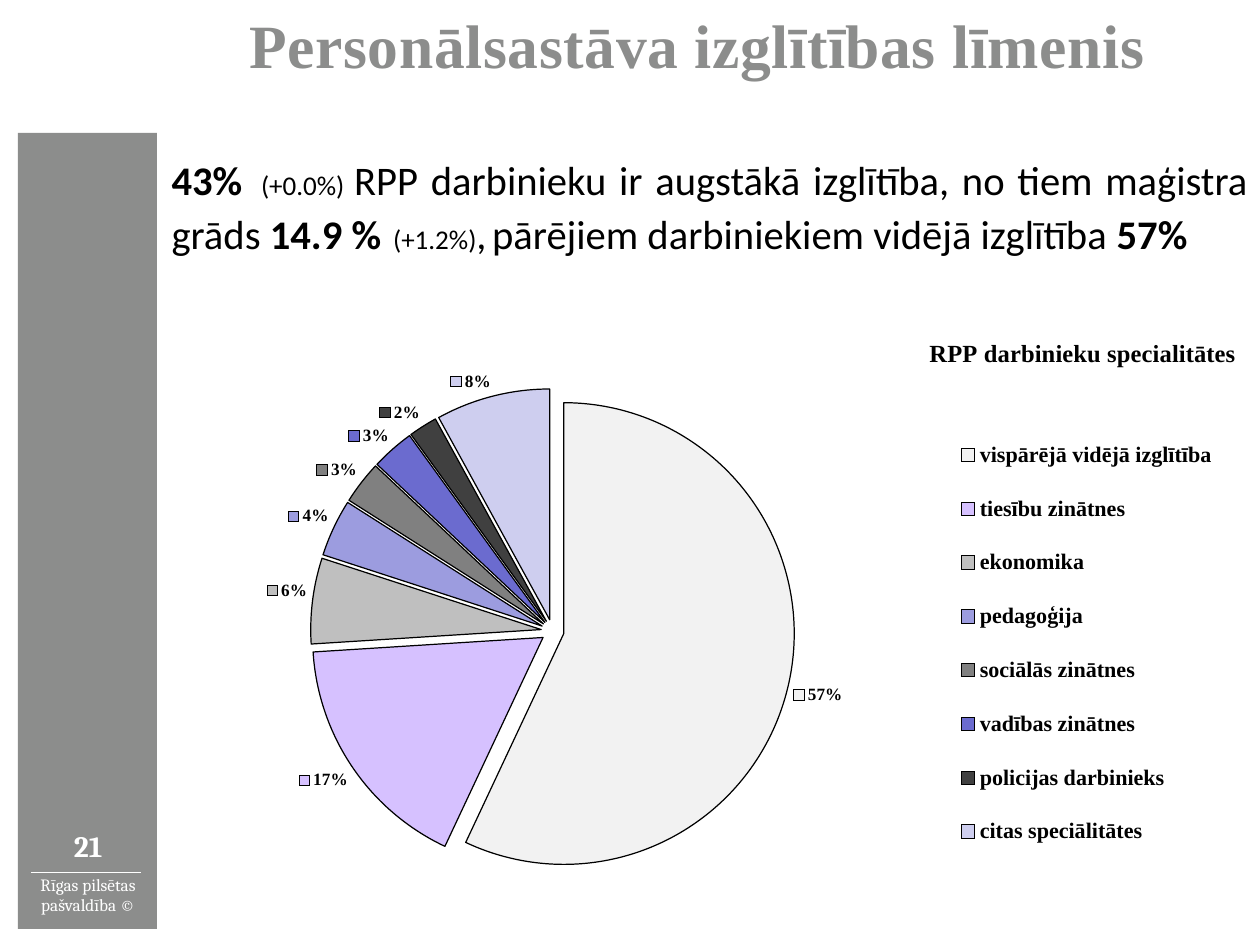
from lxml.etree import SubElement
from pptx import Presentation
from pptx.chart.data import CategoryChartData
from pptx.dml.color import RGBColor
from pptx.enum.chart import XL_CHART_TYPE, XL_LABEL_POSITION, XL_LEGEND_POSITION
from pptx.enum.shapes import MSO_CONNECTOR, MSO_SHAPE
from pptx.enum.text import MSO_ANCHOR, PP_ALIGN
from pptx.oxml import parse_xml
from pptx.oxml.ns import nsdecls, qn
from pptx.util import Cm, Pt

GREY, WHITE, BLACK = "8C8D8C", "FFFFFF", "000000"
SERIF = "Times New Roman"
TITLE = "RPP darbinieku specialitātes"
SHARES = [
    ("vispārējā vidējā izglītība", 0.57, "F2F2F2"),
    ("tiesību zinātnes", 0.17, "D6C1FF"),
    ("ekonomika", 0.06, "BFBFBF"),
    ("pedagoģija", 0.04, "9C9CDF"),
    ("sociālās zinātnes", 0.03, "808080"),
    ("vadības zinātnes", 0.03, "6B6BCF"),
    ("policijas darbinieks", 0.02, "404040"),
    ("citas speciālitātes", 0.08, "CECEEF"),
]
SUMMARY = [
    ("43%", 33, True),
    (" ", 54, False),
    ("(+0.0%) ", 22, False),
    ("RPP darbinieku ir augstākā izglītība, no tiem maģistra grāds ", 33, False),
    ("14.9 % \t", 33, True),
    ("(+1.2%)", 22, False),
    (",", 33, False),
    (" ", 20, False),
    ("pārējiem darbiniekiem vidējā izglītība ", 33, False),
    ("57%", 33, True),
]


def paint(color, value):
    color.rgb = RGBColor.from_string(value)


def style(font, name, size, color=BLACK, bold=False):
    font.name, font.size, font.bold = name, Pt(size), bold
    paint(font.color, color)


def add_bar(slide, *box):
    bar = slide.shapes.add_shape(MSO_SHAPE.RECTANGLE, *map(Cm, box))
    bar.shadow.inherit = False
    bar.fill.solid()
    paint(bar.fill.fore_color, GREY)
    bar.line.fill.background()


def add_rule(slide, left, right, top):
    rule = slide.shapes.add_connector(
        MSO_CONNECTOR.STRAIGHT, Cm(left), Cm(top), Cm(right), Cm(top))
    paint(rule.line.color, WHITE)
    rule.line.width = Pt(1)
    SubElement(rule.element.spPr, qn("a:effectLst"))


def add_text(slide, box, runs, name, color, align=PP_ALIGN.LEFT, inset=0.15):
    """Add one paragraph made of (text, size, bold) runs."""
    frame = slide.shapes.add_textbox(*map(Cm, box)).text_frame
    frame.word_wrap = True
    frame.vertical_anchor = MSO_ANCHOR.MIDDLE
    frame.margin_left = frame.margin_right = Cm(inset)
    frame.margin_top = frame.margin_bottom = Cm(inset)
    line = frame.paragraphs[0]
    line.alignment = align
    for text, size, bold in runs:
        run = line.add_run()
        run.text = text
        style(run.font, name, size, color, bold)
    return line


def place(part, **spots):
    """Give a chart part a manual layout in fractions of the chart."""
    old = part.find(qn("c:layout"))
    if old is not None:
        part.remove(old)
    inner = '<c:layoutTarget val="inner"/>' if part.tag == qn("c:plotArea") else ""
    modes = "".join(f'<c:{k}Mode val="edge"/>' for k in "xy")
    sizes = "".join(f'<c:{k} val="{v}"/>' for k, v in spots.items())
    layout = parse_xml(
        f'<c:layout {nsdecls("c")}><c:manualLayout>{inner}{modes}{sizes}'
        "</c:manualLayout></c:layout>")
    before = [n for n in part if n.tag in (qn("c:tx"), qn("c:legendPos"))]
    part.insert(len(before), layout)


def add_pie(slide, *box):
    data = CategoryChartData(number_format="0%")
    data.categories = [name for name, _, _ in SHARES]
    data.add_series(TITLE, [share for _, share, _ in SHARES])
    chart = slide.shapes.add_chart(
        XL_CHART_TYPE.PIE_EXPLODED, *map(Cm, box), data).chart
    style(chart.font, "Cambria", 18)

    chart.has_title = True
    head = chart.chart_title.text_frame
    head.text = TITLE
    style(head.paragraphs[0].runs[0].font, SERIF, 20, bold=True)

    chart.has_legend = True
    chart.legend.position = XL_LEGEND_POSITION.RIGHT
    chart.legend.include_in_layout = False
    style(chart.legend.font, SERIF, 18, bold=True)

    plot = chart.plots[0]
    plot.vary_by_categories = True
    pie = plot.series[0]
    for spot, (_, _, color) in enumerate(SHARES):
        form = pie.points[spot].format
        form.fill.solid()
        paint(form.fill.fore_color, color)
        paint(form.line.color, BLACK)
        form.line.width = Pt(1)
    for burst in pie._element.findall(qn("c:explosion")):
        burst.set("val", "5")

    labels = pie.data_labels
    labels.show_value = labels.show_legend_key = True
    labels.show_percentage = False
    labels.number_format, labels.number_format_is_linked = "0%", False
    labels.position = XL_LABEL_POSITION.OUTSIDE_END
    style(labels.font, SERIF, 14, bold=True)

    place(chart.chart_title._element, x=0.71, y=0.07)
    place(chart.legend._element, x=0.73, y=0.2, w=0.26, h=0.75)
    place(plot._element.getparent(), x=0.01, y=0.16, w=0.71, h=0.79)


def main():
    deck = Presentation()
    deck.slide_width, deck.slide_height = Cm(36.12), Cm(27.1)
    slide = deck.slides.add_slide(deck.slide_layouts[6])

    add_bar(slide, 0.51, 3.81, 3.99, 22.83)
    add_text(slide, (0.53, 25.1, 3.99, 1.12),
             [("Rīgas pilsētas pašvaldība ©", 14, False)],
             "Cambria", WHITE, PP_ALIGN.CENTER, 0)
    add_rule(slide, 0.89, 4.04, 25.02)
    add_text(slide, (0.53, 23.6, 3.99, 1.3), [("21", 24, True)],
             "Cambria", WHITE, PP_ALIGN.CENTER)

    head = add_text(slide, (7, 0, 29, 2.54),
                    [("Personālsastāva izglītības līmenis", 50, True)], SERIF, GREY)
    head.runs[0].font._element.set("spc", "50")

    body = add_text(slide, (4.27, 2.74, 31.67, 5.59), SUMMARY,
                    "Calibri", BLACK, PP_ALIGN.JUSTIFY)
    body._p.get_or_add_pPr().set("marL", str(Cm(0.5)))
    add_pie(slide, 4.55, 8.33, 31.01, 17.6)
    deck.save("out.pptx")


if __name__ == "__main__":
    main()
